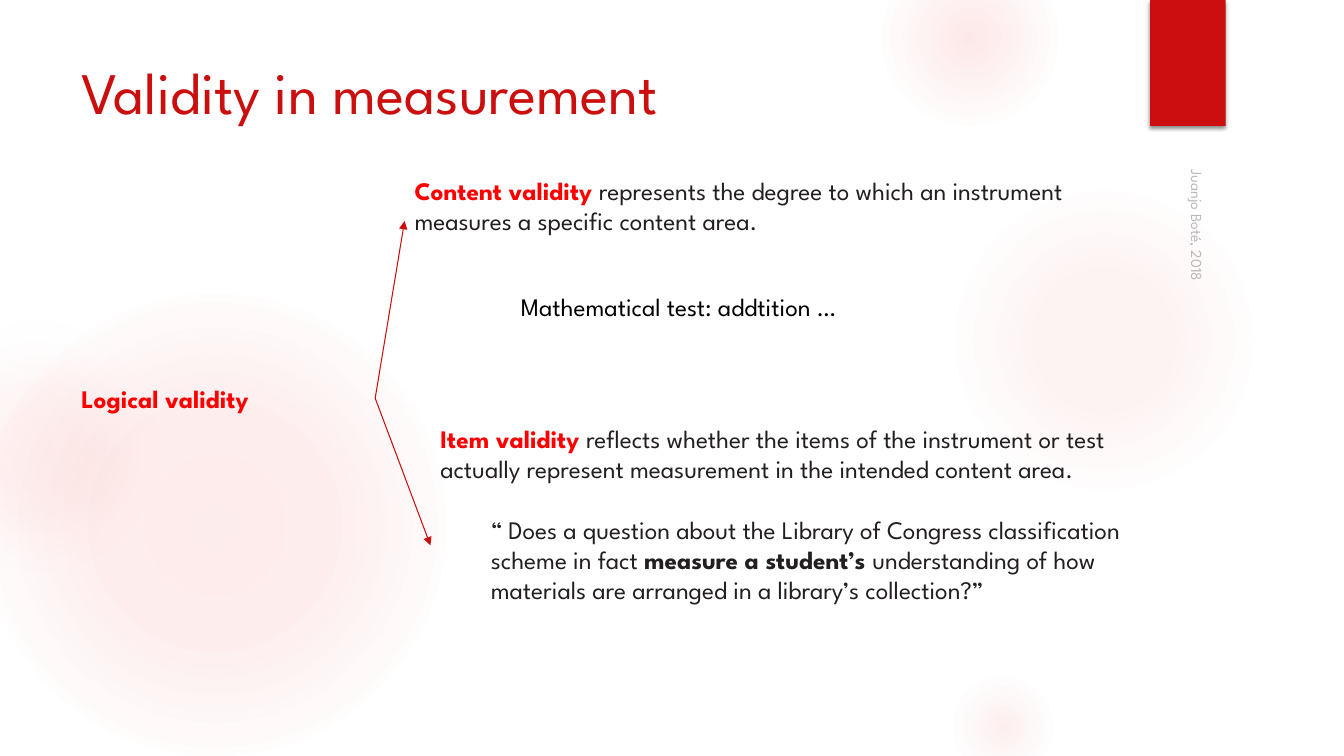
from lxml.etree import SubElement
from pptx import Presentation
from pptx.dml.color import RGBColor
from pptx.enum.shapes import MSO_CONNECTOR, MSO_SHAPE
from pptx.enum.text import MSO_ANCHOR
from pptx.oxml import parse_xml
from pptx.oxml.ns import nsdecls, qn
from pptx.util import Pt

FONT = "League Spartan"
CRIMSON = RGBColor(0xCB, 0x0F, 0x0F)
RED = RGBColor(0xFF, 0x00, 0x00)
INK = RGBColor(0x23, 0x1F, 0x20)
BLACK = RGBColor(0x00, 0x00, 0x00)
GREY = RGBColor(0x8C, 0x8C, 0x8C)
GLOW = RGBColor(0xF3, 0x5C, 0x5C)
PALE = RGBColor(0xF3, 0xF3, 0xF3)

# left, top, diameter, gradient stops (position %, colour, opacity %)
GLOWS = [
    (-12, 210, 330, [(0, GLOW, 11), (36, GLOW, 10), (75, GLOW, 0)]),
    (-66, 228, 186, [(0, GLOW, 8), (36, GLOW, 5), (71, PALE, 0)]),
    (677.5, 132, 222, [(0, GLOW, 7), (36, GLOW, 6), (69, GLOW, 0)]),
    (630, -36, 126, [(0, GLOW, 14), (36, GLOW, 7), (73, GLOW, 0)]),
    (677.5, 480, 78, [(0, GLOW, 10), (31, GLOW, 5), (66, GLOW, 0)]),
]


def add_runs(p, runs, size=18):
    """Add (text, colour, bold) runs to a paragraph."""
    for text, color, bold in runs:
        r = p.add_run()
        r.text = text
        for name, value in dict(name=FONT, size=Pt(size), bold=bold).items():
            setattr(r.font, name, value)
        r.font.color.rgb = color


def add_text(slide, box, runs, size=18):
    s = slide.shapes.add_textbox(*map(Pt, box))
    s.text_frame.word_wrap = True
    add_runs(s.text_frame.paragraphs[0], runs, size)
    return s


def add_glow(slide, left, top, diameter, stops):
    """Add a circle that fades outwards from its centre."""
    s = slide.shapes.add_shape(
        MSO_SHAPE.OVAL, Pt(left), Pt(top), Pt(diameter), Pt(diameter))
    s.shadow.inherit = False
    s.line.fill.background()
    s.fill.background()
    stop_xml = "".join(
        f'<a:gs pos="{pos * 1000}"><a:srgbClr val="{color}">'
        f'<a:alpha val="{alpha * 1000}"/></a:srgbClr></a:gs>'
        for pos, color, alpha in stops)
    gradient = parse_xml(
        f'<a:gradFill {nsdecls("a")} rotWithShape="1"><a:gsLst>{stop_xml}</a:gsLst>'
        '<a:path path="circle"><a:fillToRect l="50000" t="50000" r="50000" b="50000"/>'
        '</a:path></a:gradFill>')
    props = s._element.spPr
    props.replace(props.find(qn("a:noFill")), gradient)


def add_ribbon(slide, box):
    s = slide.shapes.add_shape(MSO_SHAPE.RECTANGLE, *map(Pt, box))
    s.fill.solid()
    s.fill.fore_color.rgb = CRIMSON
    s.line.fill.background()
    s.shadow.inherit = False
    effects = s._element.spPr.find(qn("a:effectLst"))
    effects.append(parse_xml(
        f'<a:outerShdw {nsdecls("a")} blurRad="{Pt(3)}" dist="{Pt(2)}" dir="5400000" '
        'rotWithShape="0"><a:srgbClr val="000000"><a:alpha val="45000"/>'
        '</a:srgbClr></a:outerShdw>'))


def add_arrow(slide, start, end):
    """Join the right side of one box to the left side of another."""
    s = slide.shapes.add_connector(MSO_CONNECTOR.STRAIGHT, 0, 0, 0, 0)
    s.begin_connect(start, 3)
    s.end_connect(end, 1)
    s.line.color.rgb = CRIMSON
    s.line.width = Pt(0.75)
    SubElement(s.line._get_or_add_ln(), qn("a:tailEnd"), type="triangle")
    SubElement(s._element.spPr, qn("a:effectLst"))


def add_credit(slide, box):
    s = add_text(slide, box, [("Juanjo Boté, 2018", GREY, False)], 11)
    s.rotation = 90
    s.text_frame.vertical_anchor = MSO_ANCHOR.BOTTOM
    for color in s._element.iter(qn("a:srgbClr")):
        SubElement(color, qn("a:alpha"), val="60000")


def add_validity_tree(slide, left, top):
    """Place the root concept and its two branches from a top left corner."""
    root = add_text(slide, (left, top + 148.5, 217, 28.8),
                    [("Logical validity", RED, True)])
    content = add_text(slide, (left + 238, top, 535.5, 72.7), [
        ("Content validity ", RED, True),
        ("represents the degree to which an instrument measures a specific "
         "content area.", INK, False)])
    item = add_text(slide, (left + 256.5, top + 177.3, 517, 181.5), [
        ("Item validity ", RED, True),
        ("reflects whether the items of the instrument or test actually "
         "represent measurement in the intended content area.", INK, False)])
    p = item.text_frame.add_paragraph()
    p.space_before = Pt(21.7)
    for name, value in dict(marL=Pt(36), indent=0, lvl=1).items():
        p._p.get_or_add_pPr().set(name, str(value))
    add_runs(p, [
        ("“ Does a question about the Library of Congress classification "
         "scheme in fact ", INK, False),
        ("measure a student’s ", INK, True),
        ("understanding of how materials are arranged in a library’s "
         "collection?”", INK, False)])
    for branch in (content, item):
        add_arrow(slide, root, branch)
    add_text(slide, (left + 314, top + 82.8, 289.5, 28.8),
             [("Mathematical test: addtition …", BLACK, False)])


def main():
    prs = Presentation()
    prs.slide_width, prs.slide_height = Pt(960), Pt(540)
    slide = prs.slides.add_slide(prs.slide_layouts[6])
    for glow in GLOWS:
        add_glow(slide, *glow)
    add_ribbon(slide, (821.5, 0, 54, 90))
    add_text(slide, (51, 36, 741, 110),
             [("Validity in measurement", CRIMSON, False)], 42)
    add_validity_tree(slide, 51, 121.5)
    add_credit(slide, (705, 254, 304, 24))
    prs.save("out.pptx")


if __name__ == "__main__":
    main()
